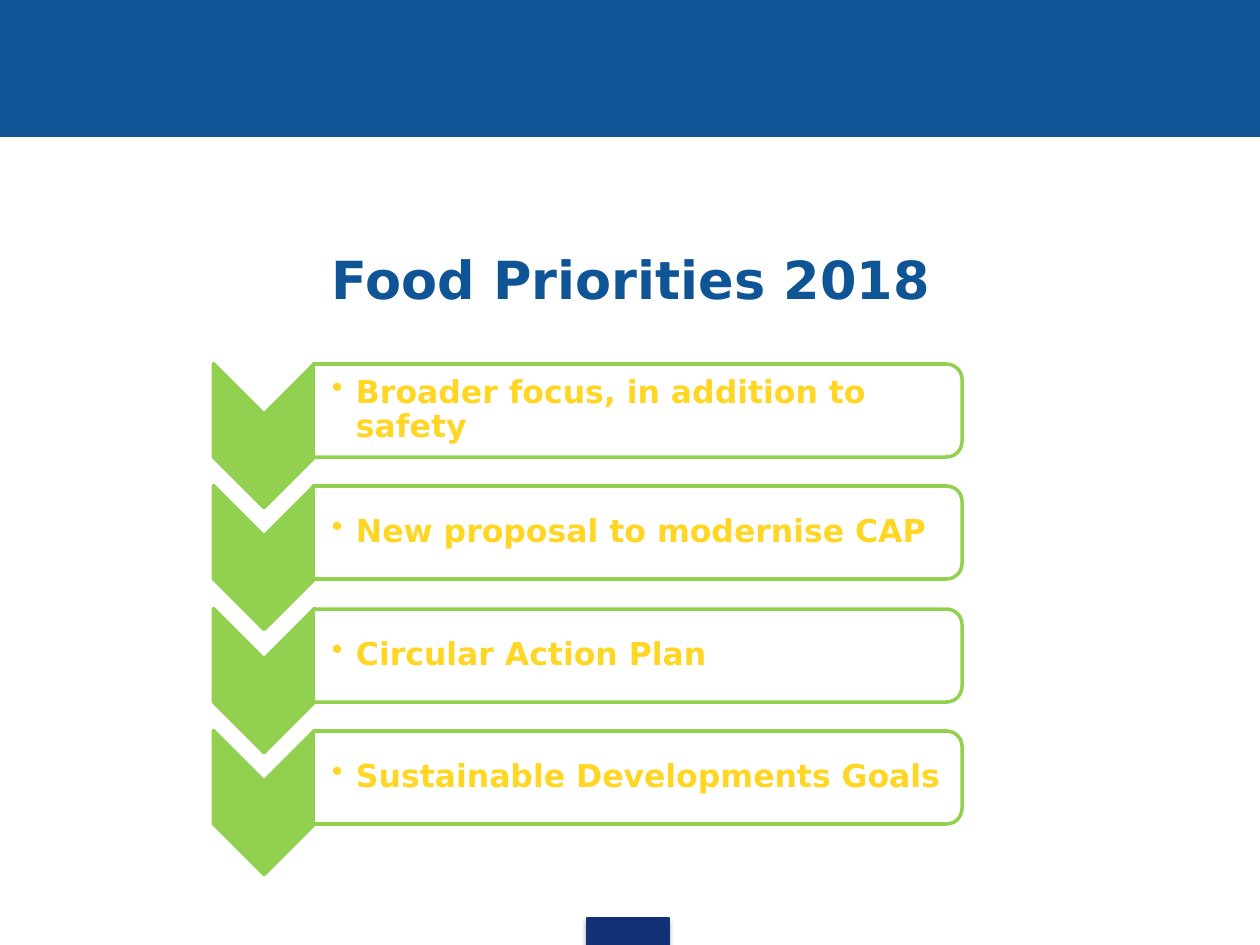
"""Build the Food Priorities 2018 slide with a chevron list of four priorities."""
import lxml.etree
import pptx
import pptx.dml.color
import pptx.enum.shapes
import pptx.enum.text
import pptx.oxml
import pptx.oxml.ns
import pptx.util

PX = 914400 / 126
FONT = "DejaVu Sans"
BLUE, NAVY, GREEN, YELLOW = "0F5494", "133176", "92D050", "FFD624"
PRIORITIES = [
    "Broader focus, in addition to safety",
    "New proposal to modernise CAP",
    "Circular Action Plan",
    "Sustainable Developments Goals",
]
SHAPE = pptx.enum.shapes.MSO_SHAPE
MIDDLE = pptx.enum.text.MSO_ANCHOR.MIDDLE
qn = pptx.oxml.ns.qn
rgb = pptx.dml.color.RGBColor.from_string


def px(*lengths):
    return [round(length * PX) for length in lengths]


def add_block(kind, box, fill, line, width, rotation=0):
    block = slide.shapes.add_shape(kind, *px(*box))
    block.rotation = rotation
    block.shadow.inherit = False
    block.fill.solid()
    block.fill.fore_color.rgb = rgb(fill)
    block.line.color.rgb = rgb(line)
    block.line.width = pptx.util.Pt(width)
    return block


presentation = pptx.Presentation()
presentation.slide_width, presentation.slide_height = px(1260, 945)
slide = presentation.slides.add_slide(presentation.slide_layouts[5])

add_block(SHAPE.RECTANGLE, (0, 0, 1260, 136), BLUE, BLUE, 0.75)
footer_tab = add_block(SHAPE.RECTANGLE, (587, 918, 82, 27), NAVY, NAVY, 0.75)
effects = footer_tab._element.spPr.find(qn("a:effectLst"))
effects.append(pptx.oxml.parse_xml(
    '<a:outerShdw xmlns:a="http://schemas.openxmlformats.org/drawingml/2006/main" '
    'blurRad="39370" dist="22860" dir="5400000" rotWithShape="0">'
    '<a:srgbClr val="000000"><a:alpha val="35000"/></a:srgbClr></a:outerShdw>'
))

title = slide.shapes.title
title.left, title.top, title.width, title.height = px(64, 214, 1134, 129)
title.text_frame.text = "Food Priorities 2018"
title.text_frame.vertical_anchor = MIDDLE
heading = title.text_frame.paragraphs[0]
heading.alignment = pptx.enum.text.PP_ALIGN.CENTER
heading.font.name = FONT
heading.font.size = pptx.util.Pt(30)
heading.font.bold = True
heading.font.color.rgb = rgb(BLUE)

for row, priority in enumerate(PRIORITIES):
    offset = row * 245 // 2
    add_block(SHAPE.CHEVRON, (192, 385 + offset, 144, 101), GREEN, GREEN, 2, 90)
    panel = add_block(SHAPE.ROUND_2_SAME_RECTANGLE, (591, 86 + offset, 93, 649),
                      "FFFFFF", GREEN, 2, 90)
    panel_color = panel._element.spPr.find(qn("a:solidFill"))[0]
    lxml.etree.SubElement(panel_color, qn("a:alpha"), val="90000")

    label = slide.shapes.add_textbox(*px(314, 368 + offset, 644, 84)).text_frame
    label.word_wrap = True
    label.vertical_anchor = MIDDLE
    label.margin_left, label.margin_top, label.margin_right, label.margin_bottom = px(18, 1, 1, 1)
    label.text = priority
    item = label.paragraphs[0]
    item.line_spacing = 0.9
    properties = item._p.get_or_add_pPr()
    indent = px(24)[0]
    properties.set("marL", str(indent))
    properties.set("indent", str(-indent))
    lxml.etree.SubElement(properties, qn("a:buChar"), char="•")
    item.font.name = FONT
    item.font.size = pptx.util.Pt(18)
    item.font.bold = True
    item.font.color.rgb = rgb(YELLOW)

presentation.save("out.pptx")
